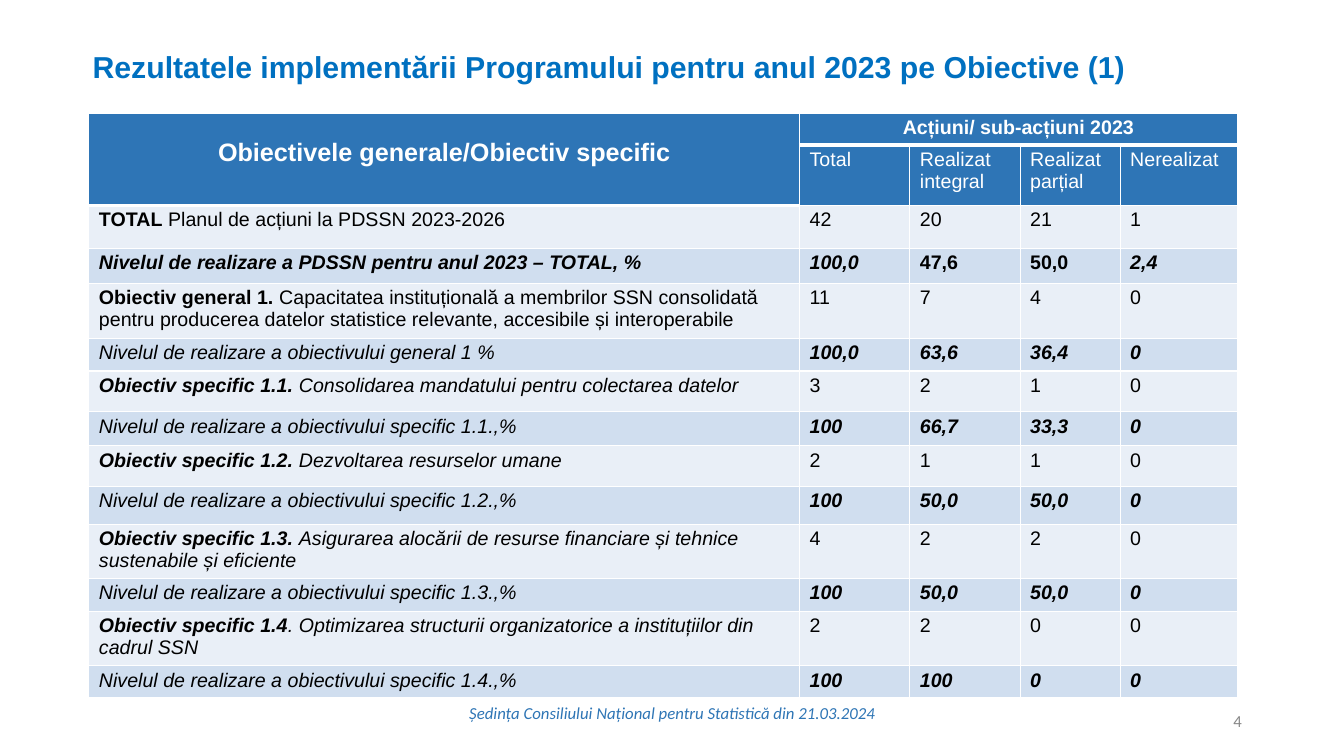
from lxml.etree import SubElement
from pptx import Presentation
from pptx.dml.color import RGBColor
from pptx.enum.text import MSO_ANCHOR, PP_ALIGN
from pptx.oxml.ns import qn
from pptx.util import Cm, Pt

BLUE, PALE, LIGHT = "2E75B6", "E9EFF7", "D0DEEF"
WHITE, BLACK = "FFFFFF", "000000"

CAPTIONS = [
    ("Rezultatele implementării Programului pentru anul 2023 pe Obiective (1)",
     (1.5, 0.89, 27.71, 1.55), PP_ALIGN.CENTER, ("Arial", 21.6, "0070C0", True, False)),
    ("Ședința Consiliului Național pentru Statistică din 21.03.2024",
     (11.23, 17.65, 11.43, 0.61), PP_ALIGN.CENTER, ("Calibri", 12, "2E75B5", False, True)),
    ("4", (23.93, 17.65, 7.62, 1.02), PP_ALIGN.RIGHT, ("Calibri", 12, "888888", False, False)),
]

OBJECTIVES_HEADING = "Obiectivele generale/Obiectiv specific"
ACTIONS_HEADING = "Acțiuni/ sub-acțiuni 2023"
ACTION_HEADINGS = ["Total", "Realizat integral", "Realizat parțial", "Nerealizat"]
HEADING_HEIGHTS = [0.8, 1.52]
COLUMN_WIDTHS = [17.91, 2.78, 2.78, 2.52, 2.96]
CELL_MARGIN = 0.09
OBJECTIVES_MARGIN = 0.64

OBJECTIVES = [
    (("TOTAL", " Planul de acțiuni la PDSSN 2023-2026"), False,
     ["42", "20", "21", "1"], 1.08,
     ("Nivelul de realizare a PDSSN pentru anul 2023 – TOTAL, %", ""),
     ["100,0", "47,6", "50,0", "2,4"], 0.88),
    (("Obiectiv general 1. ", "Capacitatea instituțională a membrilor SSN consolidată pentru "
      "producerea datelor statistice relevante, accesibile și interoperabile"), False,
     ["11", "7", "4", "0"], 1.39,
     ("", "Nivelul de realizare a obiectivului general 1 %"),
     ["100,0", "63,6", "36,4", "0"], 0.82),
    (("Obiectiv specific 1.1. ", "Consolidarea mandatului pentru colectarea datelor"), True,
     ["3", "2", "1", "0"], 1.03,
     ("", "Nivelul de realizare a obiectivului specific 1.1.,%"),
     ["100", "66,7", "33,3", "0"], 0.85),
    (("Obiectiv specific 1.2. ", "Dezvoltarea resurselor umane"), True,
     ["2", "1", "1", "0"], 1.03,
     ("", "Nivelul de realizare a obiectivului specific 1.2.,%"),
     ["100", "50,0", "50,0", "0"], 0.95),
    (("Obiectiv specific 1.3. ", "Asigurarea alocării de resurse financiare și tehnice "
      "sustenabile și eficiente"), True,
     ["4", "2", "2", "0"], 1.37,
     ("", "Nivelul de realizare a obiectivului specific 1.3.,%"),
     ["100", "50,0", "50,0", "0"], 0.83),
    (("Obiectiv specific 1.4", ". Optimizarea structurii organizatorice a instituțiilor din "
      "cadrul SSN"), True,
     ["2", "2", "0", "0"], 1.37,
     ("", "Nivelul de realizare a obiectivului specific 1.4.,%"),
     ["100", "100", "0", "0"], 0.8),
]
UPRIGHT_PERCENTS = ["47,6", "50,0"]


def color(value):
    return RGBColor.from_string(value)


def style(run, face, size, ink, bold, italic):
    run.font.name = face
    run.font.size = Pt(size)
    run.font.color.rgb = color(ink)
    run.font.bold = bold
    run.font.italic = italic


def fill_cell(cell, parts, fill, ink=BLACK, size=14, italic=False, align=PP_ALIGN.LEFT, thick=""):
    properties = cell._tc.get_or_add_tcPr()
    for side in "LRTB":
        border = SubElement(properties, qn(f"a:ln{side}"), w=str(Pt(3 if side in thick else 1)))
        SubElement(SubElement(border, qn("a:solidFill")), qn("a:srgbClr"), val=WHITE)
    cell.fill.solid()
    cell.fill.fore_color.rgb = color(fill)
    cell.margin_top = cell.margin_bottom = Cm(CELL_MARGIN)
    paragraph = cell.text_frame.paragraphs[0]
    paragraph.alignment = align
    for text, bold in parts:
        if text:
            run = paragraph.add_run()
            run.text = text
            style(run, "Arial", size, ink, bold, italic)


def add_caption(slide, text, place, align, look):
    frame = slide.shapes.add_textbox(*map(Cm, place)).text_frame
    frame.word_wrap = True
    frame.vertical_anchor = MSO_ANCHOR.MIDDLE
    frame.text = text
    frame.paragraphs[0].alignment = align
    style(frame.paragraphs[0].runs[0], *look)


def add_results(slide):
    rows = []
    for label, italic, counts, count_height, level, percents, percent_height in OBJECTIVES:
        rows.append((label, italic, counts, False, count_height, PALE))
        rows.append((level, True, percents, True, percent_height, LIGHT))
    heights = HEADING_HEIGHTS + [row[4] for row in rows]
    table = slide.shapes.add_table(
        len(heights), len(COLUMN_WIDTHS), Cm(2.24), Cm(2.86),
        Cm(sum(COLUMN_WIDTHS)), Cm(sum(heights))).table
    for column, width in zip(table.columns, COLUMN_WIDTHS):
        column.width = Cm(width)
    for row, height in zip(table.rows, heights):
        row.height = Cm(height)

    table.cell(0, 0).merge(table.cell(1, 0))
    table.cell(0, 1).merge(table.cell(0, 4))
    fill_cell(table.cell(0, 0), [(OBJECTIVES_HEADING, True)], BLUE, WHITE, 18,
              align=PP_ALIGN.CENTER, thick="B")
    table.cell(0, 0).margin_top = Cm(OBJECTIVES_MARGIN)
    fill_cell(table.cell(1, 0), [], BLUE, thick="B")
    fill_cell(table.cell(0, 1), [(ACTIONS_HEADING, True)], BLUE, WHITE,
              align=PP_ALIGN.CENTER, thick="B")
    for c, heading in enumerate(ACTION_HEADINGS, 1):
        if c > 1:
            fill_cell(table.cell(0, c), [], BLUE, thick="B")
        fill_cell(table.cell(1, c), [(heading, False)], BLUE, WHITE, thick="T")

    for r, ((lead, rest), italic, values, percent, _, fill) in enumerate(rows, 2):
        fill_cell(table.cell(r, 0), [(lead, True), (rest, False)], fill, italic=italic,
                  thick="T" if r == 2 else "")
        for c, value in enumerate(values, 1):
            upright = r == 3 and value in UPRIGHT_PERCENTS
            fill_cell(table.cell(r, c), [(value, percent)], fill, italic=percent and not upright)


def main():
    presentation = Presentation()
    presentation.slide_width, presentation.slide_height = Cm(33.87), Cm(19.05)
    slide = presentation.slides.add_slide(presentation.slide_layouts[6])
    for caption in CAPTIONS:
        add_caption(slide, *caption)
    add_results(slide)
    presentation.save("out.pptx")


if __name__ == "__main__":
    main()
